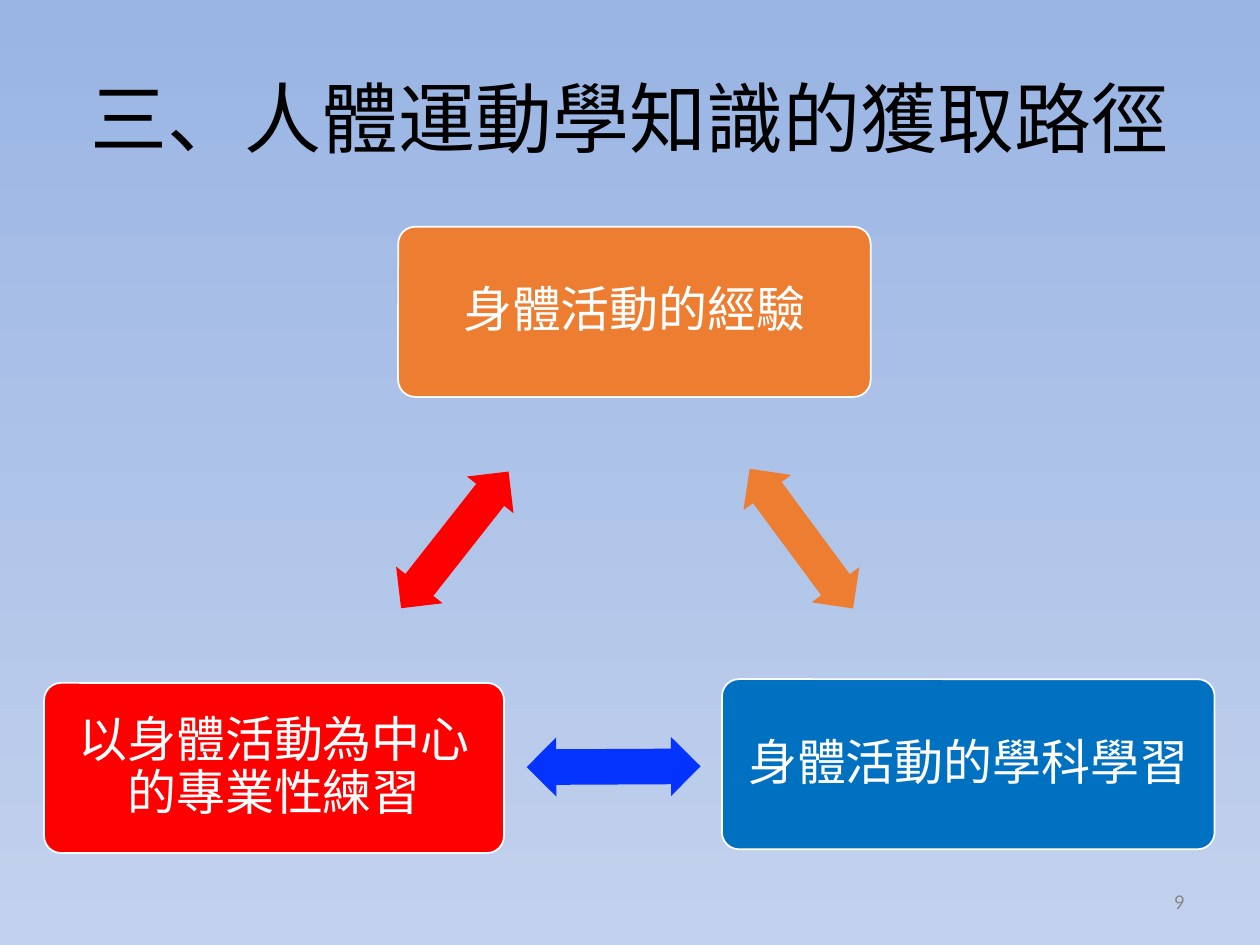
from lxml import etree
from pptx import Presentation
from pptx.dml.color import RGBColor
from pptx.enum.shapes import MSO_SHAPE
from pptx.enum.text import MSO_ANCHOR, PP_ALIGN
from pptx.oxml.ns import qn
from pptx.util import Inches, Pt

ROUNDED = MSO_SHAPE.ROUNDED_RECTANGLE
DOUBLE_ARROW = MSO_SHAPE.LEFT_RIGHT_ARROW
MIDDLE = MSO_ANCHOR.MIDDLE
CENTER, RIGHT = PP_ALIGN.CENTER, PP_ALIGN.RIGHT

COLORS = {
    "sky_top": "9AB5E4", "sky_bottom": "C2D1ED",
    "orange": "ED7D31", "red": "FF0000", "blue": "0070C0", "bright_blue": "0432FF",
    "white": "FFFFFF", "black": "000000", "gray": "898989",
}
CJK_FONT = "Noto Sans CJK SC"
BOX_HEIGHT = 1.35
ARROW_SIZE = (1.38, 0.47)


def write_text(shape, text, size, color, font_name=CJK_FONT, alignment=CENTER):
    """Fill a shape with one vertically centred paragraph and return it."""
    frame = shape.text_frame
    frame.word_wrap = True
    frame.vertical_anchor = MIDDLE
    paragraph = frame.paragraphs[0]
    paragraph.alignment = alignment
    run = paragraph.add_run()
    run.text = text
    run.font.size = Pt(size)
    run.font.name = font_name
    run.font.color.rgb = RGBColor.from_string(COLORS[color])
    east_asian = etree.SubElement(run.font._element, qn("a:ea"))
    east_asian.set("typeface", font_name)
    return paragraph


def add_filled_shape(kind, left, top, width, height, color):
    shape = slide.shapes.add_shape(
        kind, Inches(left), Inches(top), Inches(width), Inches(height))
    shape.shadow.inherit = False
    shape.fill.solid()
    shape.fill.fore_color.rgb = RGBColor.from_string(COLORS[color])
    return shape


presentation = Presentation()
presentation.slide_width = Inches(10)
presentation.slide_height = Inches(7.5)
slide = presentation.slides.add_slide(presentation.slide_layouts[6])

background = slide.background.fill
background.gradient()
background.gradient_angle = 270
for stop, position, name in zip(
        background.gradient_stops, (0, 1), ("sky_top", "sky_bottom")):
    stop.position = position
    stop.color.rgb = RGBColor.from_string(COLORS[name])

title = slide.shapes.add_textbox(Inches(0.5), Inches(0.3), Inches(9), Inches(1.25))
write_text(title, "三、人體運動學知識的獲取路徑", 44, "black")

# Knowledge sources: left, top, width, colour, text
sources = [
    (3.16, 1.8, 3.75, "orange", "身體活動的經驗"),
    (5.73, 5.39, 3.91, "blue", "身體活動的學科學習"),
    (0.35, 5.42, 3.65, "red", "以身體活動為中心的專業性練習"),
]
for left, top, width, color, text in sources:
    box = add_filled_shape(ROUNDED, left, top, width, BOX_HEIGHT, color)
    box.adjustments[0] = 0.1
    box.line.color.rgb = RGBColor.from_string(COLORS["white"])
    box.line.width = Pt(1)
    frame = box.text_frame
    frame.margin_left = frame.margin_right = Inches(0.13)
    frame.margin_top = frame.margin_bottom = Inches(0.13)
    paragraph = write_text(box, text, 28, "white")
    paragraph.line_spacing = 0.9

# Links between the sources: left, top, rotation, colour
links = [
    (5.67, 4.04, 53.5, "orange"),
    (4.18, 5.85, 179.7, "bright_blue"),
    (2.92, 4.05, 308.2, "red"),
]
for left, top, rotation, color in links:
    arrow = add_filled_shape(DOUBLE_ARROW, left, top, *ARROW_SIZE, color)
    arrow.adjustments[0] = 0.6
    arrow.adjustments[1] = 0.5
    arrow.rotation = rotation
    arrow.line.fill.background()

page_number = slide.shapes.add_textbox(
    Inches(7.17), Inches(6.95), Inches(2.33), Inches(0.4))
write_text(page_number, "9", 12, "gray", "Calibri", RIGHT)

presentation.save("out.pptx")
